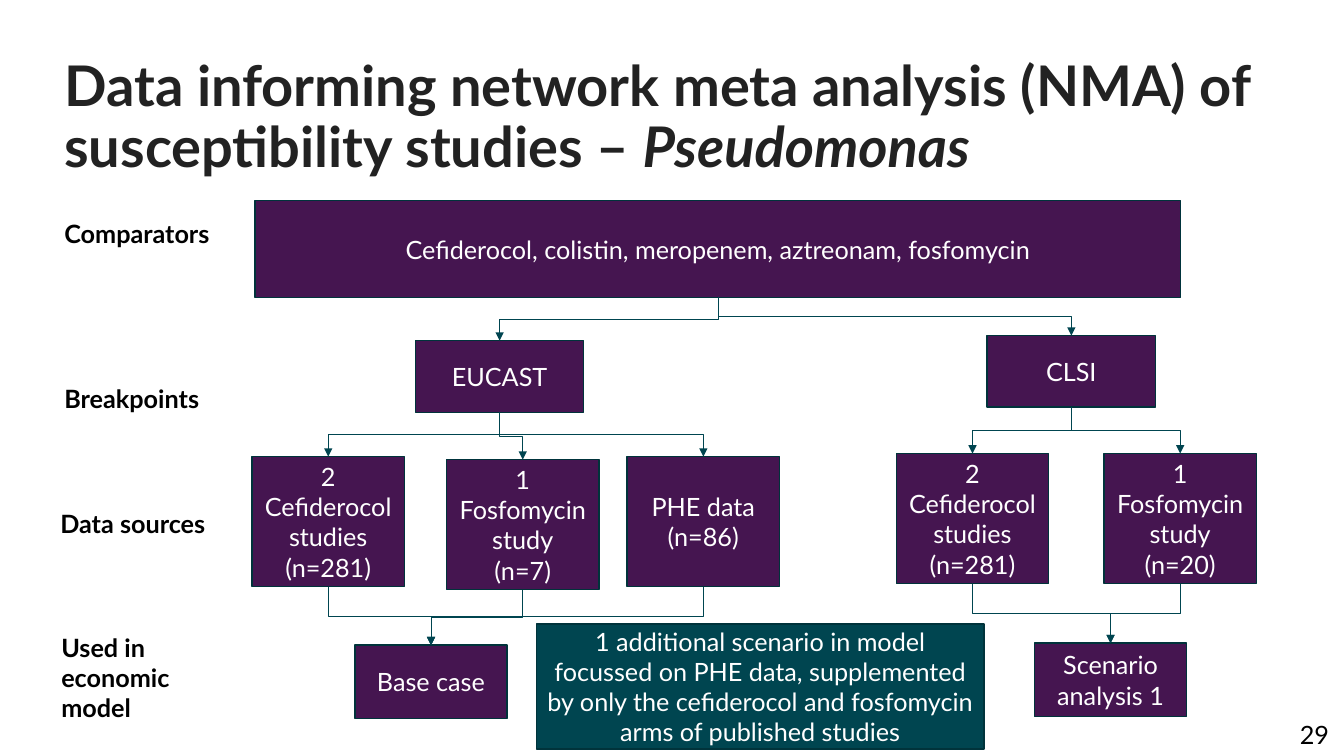
from dataclasses import dataclass

from lxml import etree
from pptx import Presentation
from pptx.dml.color import RGBColor
from pptx.enum.shapes import MSO_CONNECTOR, MSO_SHAPE
from pptx.enum.text import MSO_ANCHOR, PP_ALIGN
from pptx.oxml.ns import qn
from pptx.shapes.autoshape import Shape
from pptx.shapes.shapetree import SlideShapes
from pptx.text.text import TextFrame
from pptx.util import Inches, Pt

RECT = MSO_SHAPE.RECTANGLE
ELBOW = MSO_CONNECTOR.ELBOW
TOP, MIDDLE = MSO_ANCHOR.TOP, MSO_ANCHOR.MIDDLE
LEFT, CENTER, RIGHT = PP_ALIGN.LEFT, PP_ALIGN.CENTER, PP_ALIGN.RIGHT
PURPLE = RGBColor(0x45, 0x15, 0x50)
TEAL = RGBColor(0x00, 0x45, 0x50)
EDGE = RGBColor(0x00, 0x33, 0x3B)
INK = RGBColor(0x22, 0x22, 0x22)
BLACK = RGBColor(0, 0, 0)
WHITE = RGBColor(0xFF, 0xFF, 0xFF)
FONT = "Lato"
TOP_SITE, BOTTOM_SITE = 0, 2


@dataclass
class Label:
    text: str
    left: float
    top: float
    width: float = 1.67
    height: float = 0.4
    size: int = 18
    color: RGBColor = BLACK
    bold: bool = True
    align: PP_ALIGN = LEFT


@dataclass
class Box:
    name: str
    text: str
    left: float
    top: float
    width: float = 1.51
    height: float = 1.29
    fill: RGBColor = PURPLE


TITLE = Label("Data informing network meta analysis (NMA) of susceptibility studies – ",
              0.54, 0.53, 12.12, 1.4, 40, INK)
LABELS = [
    Label("Comparators", 0.54, 2.12),
    Label("Breakpoints", 0.54, 3.75),
    Label("Data sources", 0.5, 4.99),
    Label("Used in economic model", 0.51, 6.22, 1.96, 1.01),
    Label("29", 11.44, 7.09, 1.84, bold=False, align=RIGHT),
]
BOXES = [
    Box("drugs", "Cefiderocol, colistin, meropenem, aztreonam, fosfomycin",
        2.53, 1.99, 9.18, 0.96),
    Box("eucast", "EUCAST", 4.12, 3.38, 1.67, 0.71),
    Box("clsi", "CLSI", 9.79, 3.33, 1.67, 0.71),
    Box("e_cef", "2 Cefiderocol studies (n=281)", 2.5, 4.53),
    Box("e_fos", "1 Fosfomycin study\n(n=7)", 4.43, 4.56),
    Box("phe", "PHE data\n(n=86)", 6.22, 4.53),
    Box("c_cef", "2 Cefiderocol studies (n=281)", 8.89, 4.5),
    Box("c_fos", "1 Fosfomycin study\n(n=20)", 10.95, 4.5),
    Box("base", "Base case", 3.52, 6.4, height=0.73),
    Box("scene", "Scenario analysis 1", 10.26, 6.38, height=0.73),
    Box("extra", "1 additional scenario in model focussed on PHE data, supplemented "
        "by only the cefiderocol and fosfomycin arms of published studies",
        5.32, 6.19, 4.44, 1.24, TEAL),
]
LINKS = [
    ("drugs", "eucast"), ("drugs", "clsi"),
    ("eucast", "e_cef"), ("eucast", "e_fos"), ("eucast", "phe"),
    ("clsi", "c_cef"), ("clsi", "c_fos"),
    ("e_cef", "base"), ("e_fos", "base"), ("phe", "base"),
    ("c_cef", "scene"), ("c_fos", "scene"),
]


def style(frame: TextFrame, size: int, color: RGBColor, bold: bool, align: PP_ALIGN) -> None:
    frame.word_wrap = True
    for para in frame.paragraphs:
        para.alignment = align
        para.font.name = FONT
        para.font.size = Pt(size)
        para.font.bold = bold
        para.font.color.rgb = color


def add_label(shapes: SlideShapes, label: Label) -> TextFrame:
    frame = shapes.add_textbox(Inches(label.left), Inches(label.top),
                               Inches(label.width), Inches(label.height)).text_frame
    frame.text = label.text
    frame.vertical_anchor = TOP
    style(frame, label.size, label.color, label.bold, label.align)
    return frame


def add_box(shapes: SlideShapes, box: Box) -> Shape:
    shape = shapes.add_shape(RECT, Inches(box.left), Inches(box.top),
                             Inches(box.width), Inches(box.height))
    shape.shadow.inherit = False
    shape.fill.solid()
    shape.fill.fore_color.rgb = box.fill
    shape.line.color.rgb = EDGE
    shape.line.width = Pt(1)
    shape.text_frame.text = box.text
    shape.text_frame.vertical_anchor = MIDDLE
    style(shape.text_frame, 18, WHITE, False, CENTER)
    return shape


def add_link(shapes: SlideShapes, start: Shape, end: Shape) -> None:
    x1, y1 = start.left + start.width // 2, start.top + start.height
    x2, y2 = end.left + end.width // 2, end.top
    link = shapes.add_connector(ELBOW, x1, y1, x2, y2)
    link.begin_connect(start, BOTTOM_SITE)
    link.end_connect(end, TOP_SITE)
    link.width, link.height = y2 - y1, abs(x2 - x1)
    link.left = (x1 + x2 - link.width) // 2
    link.top = (y1 + y2 - link.height) // 2
    props = link.element.spPr
    frame = props.find(qn("a:xfrm"))
    right = x2 > x1
    frame.set("rot", str((270 if right else 90) * 60000))
    frame.set("flipH", "1" if right else "0")
    frame.set("flipV", "0")
    link.line.color.rgb = TEAL
    link.line.width = Pt(0.5)
    etree.SubElement(props.find(qn("a:ln")), qn("a:tailEnd"), type="triangle")
    etree.SubElement(props, qn("a:effectLst"))


def main() -> None:
    deck = Presentation()
    deck.slide_width, deck.slide_height = Inches(13.33), Inches(7.5)
    shapes = deck.slides.add_slide(deck.slide_layouts[6]).shapes
    title = add_label(shapes, TITLE).paragraphs[0]
    title.line_spacing = 0.9
    genus = title.add_run()
    genus.text = "Pseudomonas"
    genus.font.italic = True
    for label in LABELS:
        add_label(shapes, label)
    nodes = {box.name: add_box(shapes, box) for box in BOXES}
    for start, end in LINKS:
        add_link(shapes, nodes[start], nodes[end])
    deck.save("out.pptx")


if __name__ == "__main__":
    main()
